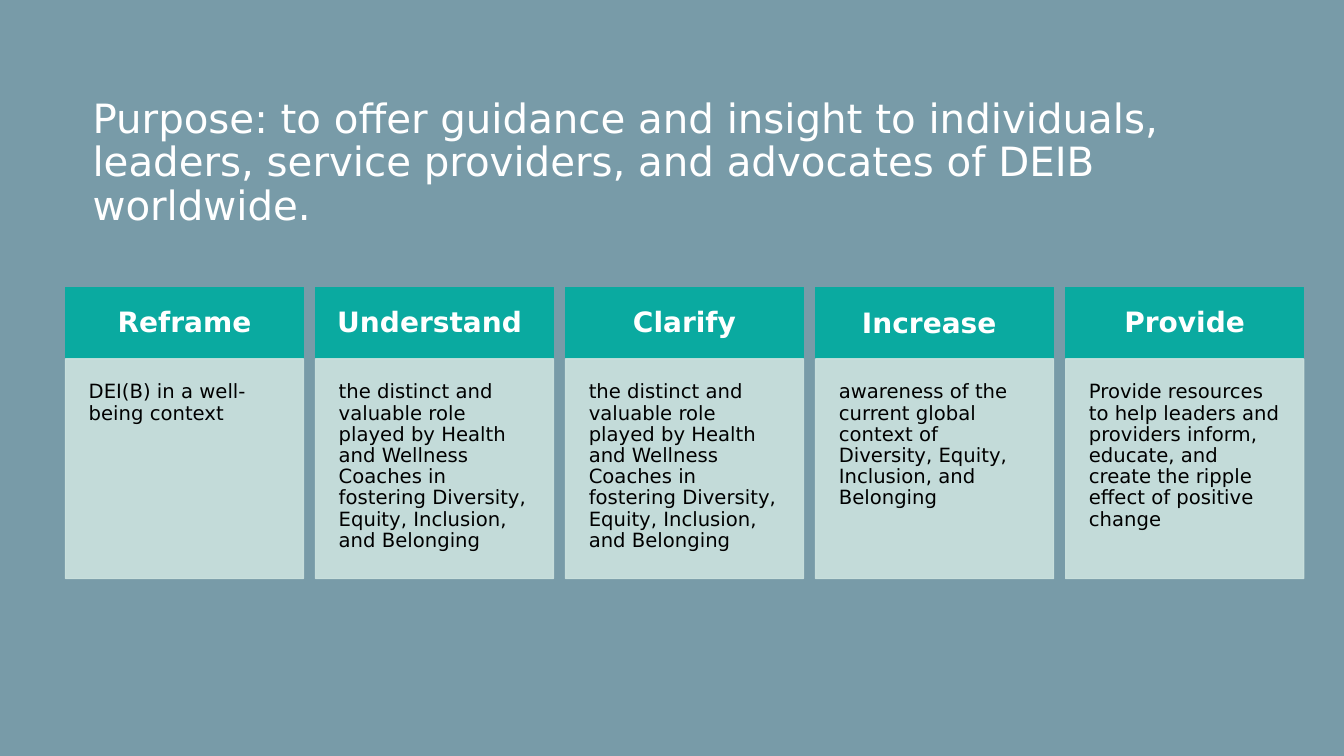
from pptx import Presentation
from pptx.dml.color import RGBColor
from pptx.enum import shapes, text
from pptx.oxml.ns import qn
from pptx.util import Inches, Pt
from lxml import etree

# Content
TITLE = ("Purpose: to offer guidance and insight to individuals, leaders, "
         "service providers, and advocates of DEIB worldwide.")
COACH_ROLE = ("the distinct and valuable role played by Health and Wellness Coaches "
              "in fostering Diversity, Equity, Inclusion, and Belonging")
COLUMNS = [
    ("Reframe", "DEI(B) in a well-being context"),
    ("Understand ", COACH_ROLE),
    ("Clarify", COACH_ROLE),
    ("Increase", "awareness of the current global context of Diversity, Equity, "
                 "Inclusion, and Belonging"),
    ("Provide", "Provide resources to help leaders and providers inform, educate, "
                "and create the ripple effect of positive change"),
]

# Style and layout
FONT = "DejaVu Sans"
SLATE, TEAL, MINT, WHITE, BLACK = "789BA8", "0AAAA0", "CCE2DF", "FFFFFF", "000000"
LEFT, PITCH, WIDTH = 0.65, 2.48, 2.36
HEAD_TOP, HEAD_HEIGHT, BODY_HEIGHT = 2.85, 0.71, 2.18


def paint(color_format, color):
    color_format.rgb = RGBColor.from_string(color)


def write(box, words, size, color, inset, anchor, align, bold=False):
    frame = box.text_frame
    frame.word_wrap = True
    frame.vertical_anchor = anchor
    frame.margin_left = frame.margin_right = Inches(inset[0])
    frame.margin_top = frame.margin_bottom = Inches(inset[1])
    frame.text = words
    para = frame.paragraphs[0]
    para.alignment = align
    para.line_spacing = 0.9
    span = para.runs[0]
    span.font.name, span.font.size, span.font.bold = FONT, Pt(size), bold
    paint(span.font.color, color)
    return para


def add_panel(left, top, height, color, opacity=100):
    panel = page.shapes.add_shape(shapes.MSO_SHAPE.RECTANGLE, Inches(left),
                                  Inches(top), Inches(WIDTH), Inches(height))
    panel.shadow.inherit = False
    panel.fill.solid()
    paint(panel.fill.fore_color, color)
    paint(panel.line.color, color)
    panel.line.width = Pt(1)
    if opacity < 100:
        for tint in panel._element.spPr.iter(qn("a:srgbClr")):
            etree.SubElement(tint, qn("a:alpha")).set("val", str(opacity * 1000))
    return panel


# Page and title
deck = Presentation()
deck.slide_width, deck.slide_height = Inches(13.33), Inches(7.5)
page = deck.slides.add_slide(deck.slide_layouts[6])
page.background.fill.solid()
paint(page.background.fill.fore_color, SLATE)
title = page.shapes.add_textbox(Inches(0.82), Inches(0.9), Inches(11.5), Inches(1.45))
write(title, TITLE, 28.8, WHITE, (0.1, 0.05),
      text.MSO_ANCHOR.MIDDLE, text.PP_ALIGN.LEFT)

# Columns: heading above description
for index, (heading, description) in enumerate(COLUMNS):
    left = LEFT + index * PITCH
    head = add_panel(left, HEAD_TOP, HEAD_HEIGHT, TEAL)
    para = write(head, heading, 20, WHITE, (0.19, 0.19),
                 text.MSO_ANCHOR.MIDDLE, text.PP_ALIGN.CENTER, bold=True)
    if heading == "Increase":  # a larger trailing space sets this heading lower
        space = para.add_run()
        space.text = " "
        space.font.name, space.font.size = FONT, Pt(24)
    body = add_panel(left, HEAD_TOP + HEAD_HEIGHT, BODY_HEIGHT, MINT, opacity=90)
    write(body, description, 14, BLACK, (0.23, 0.23),
          text.MSO_ANCHOR.TOP, text.PP_ALIGN.LEFT)

deck.save("out.pptx")
